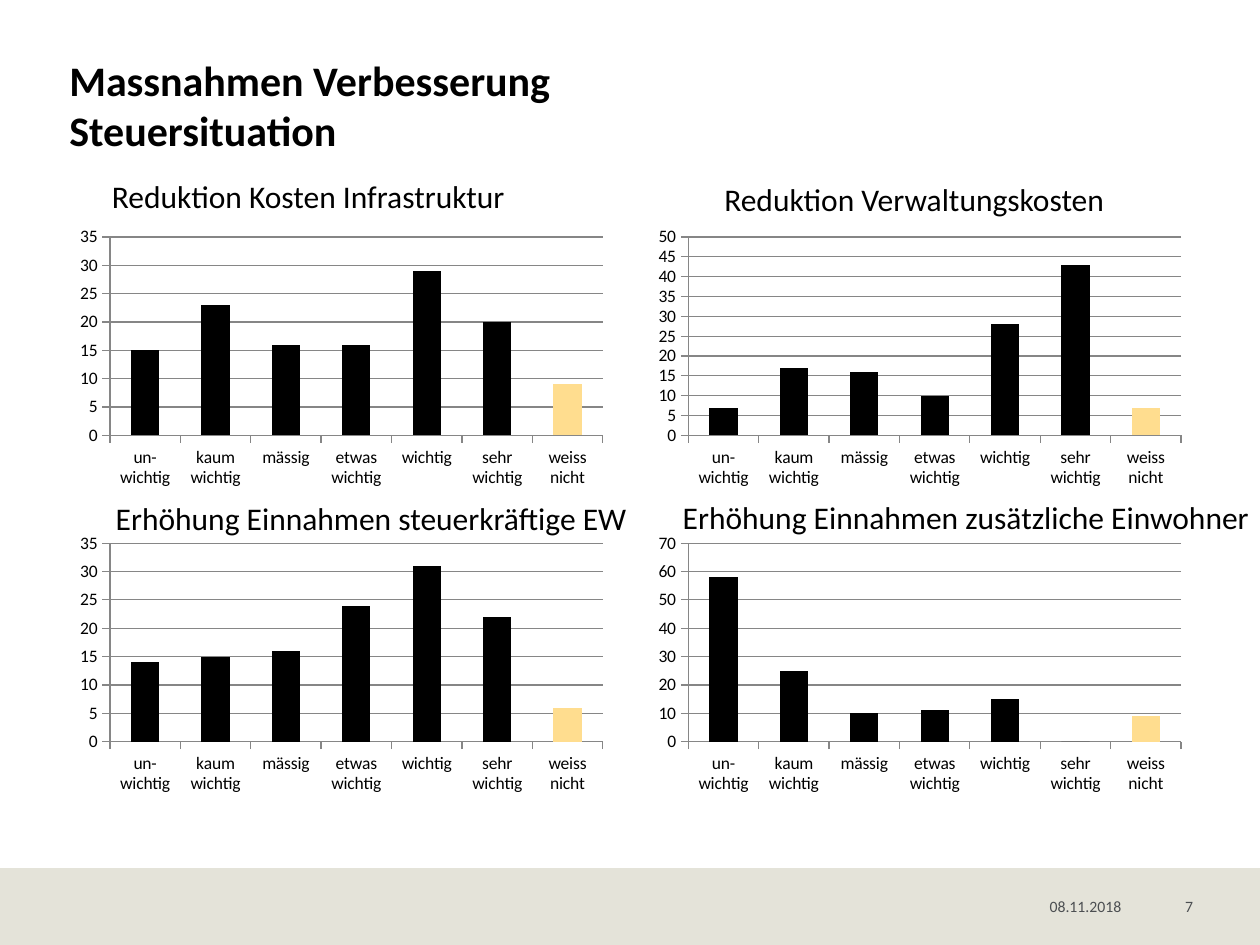
from pptx import Presentation
from pptx.chart.data import CategoryChartData
from pptx.dml.color import RGBColor
from pptx.enum.chart import XL_CHART_TYPE, XL_TICK_MARK
from pptx.enum.shapes import MSO_SHAPE
from pptx.enum.text import MSO_ANCHOR, PP_ALIGN
from pptx.util import Inches, Pt

BLACK = RGBColor(0x00, 0x00, 0x00)
AMBER = RGBColor(0xFF, 0xDD, 0x8F)
AXIS_GREY = RGBColor(0x86, 0x86, 0x86)
FOOTER_TEXT = RGBColor(0x4C, 0x4F, 0x52)
FOOTER_FILL = RGBColor(0xE4, 0xE3, 0xD9)
COLUMN = XL_CHART_TYPE.COLUMN_CLUSTERED
TICK_OUTSIDE = XL_TICK_MARK.OUTSIDE
TOP, BOTTOM = MSO_ANCHOR.TOP, MSO_ANCHOR.BOTTOM
LEFT, RIGHT = PP_ALIGN.LEFT, PP_ALIGN.RIGHT
FONT = "Calibri"

MARGIN = 0.55
CONTENT_WIDTH = 8.91
CHART_WIDTH, CHART_HEIGHT = 4.32, 2.15
COLUMN_STEP, ROW_STEP = 4.59, 2.43
CHARTS_TOP = 1.76
CATEGORIES = ["un-wichtig", "kaum wichtig", "mässig", "etwas wichtig",
              "wichtig", "sehr wichtig", "weiss nicht"]
PANELS = [
    ("Reduktion Kosten Infrastruktur", (0.79, 1.36, 3.35, 0.4),
     [15, 23, 16, 16, 29, 20, 9], 35, 5),
    ("Reduktion Verwaltungskosten", (5.65, 1.38, 3.25, 0.4),
     [7, 17, 16, 10, 28, 43, 7], 50, 5),
    ("Erhöhung Einnahmen steuerkräftige EW", (0.82, 3.91, 4.31, 0.4),
     [14, 15, 16, 24, 31, 22, 6], 35, 5),
    ("Erhöhung Einnahmen zusätzliche Einwohner", (5.32, 3.9, 4.75, 0.4),
     [58, 25, 10, 11, 15, 0, 9], 70, 10),
]


def add_text(page, area, text, size, color=BLACK, bold=False, align=LEFT,
             anchor=TOP, wrap=True, inset=(0, 0)):
    """Place one line of text in the given area."""
    box = page.shapes.add_textbox(*map(Inches, area))
    frame = box.text_frame
    frame.word_wrap = wrap
    frame.vertical_anchor = anchor
    frame.margin_left = frame.margin_right = Inches(inset[0])
    frame.margin_top = frame.margin_bottom = Inches(inset[1])
    para = frame.paragraphs[0]
    para.text = text
    para.alignment = align
    para.font.name = FONT
    para.font.size = Pt(size)
    para.font.bold = bold
    para.font.color.rgb = color


def add_heading(page, left, top, width):
    """Place the two heading lines."""
    add_text(page, (left, top, width, 0.4), "Massnahmen Verbesserung", 24, bold=True)
    add_text(page, (left, top + 0.4, width, 0.48), "Steuersituation", 24, bold=True)


def add_footer(page, left, top, width, height):
    """Place the footer band with date and page number."""
    band = page.shapes.add_shape(
        MSO_SHAPE.RECTANGLE, *map(Inches, (left, top, width, height)))
    band.shadow.inherit = False
    band.fill.solid()
    band.fill.fore_color.rgb = FOOTER_FILL
    band.line.fill.background()
    text_top = top + 0.04
    add_text(page, (left + 8.33, text_top, 0.71, 0.34), "08.11.2018", 9,
             FOOTER_TEXT, anchor=BOTTOM)
    add_text(page, (left + 9.04, text_top, 0.43, 0.34), "7", 9,
             FOOTER_TEXT, align=RIGHT, anchor=BOTTOM)


def add_column_chart(page, area, values, maximum, unit):
    """Place a column chart whose last column is highlighted."""
    data = CategoryChartData()
    data.categories = CATEGORIES
    data.add_series("Series 1", values)
    chart = page.shapes.add_chart(COLUMN, *map(Inches, area), data).chart
    chart.has_legend = False
    chart.has_title = False
    chart.font.name = FONT
    chart.font.size = Pt(10)
    chart.font.color.rgb = BLACK

    value_axis = chart.value_axis
    value_axis.minimum_scale = 0
    value_axis.maximum_scale = maximum
    value_axis.major_unit = unit
    value_axis.has_major_gridlines = True
    value_axis.major_gridlines.format.line.color.rgb = AXIS_GREY
    for axis in (value_axis, chart.category_axis):
        axis.major_tick_mark = TICK_OUTSIDE
        axis.format.line.color.rgb = AXIS_GREY

    plot = chart.plots[0]
    plot.gap_width = 150
    plot.vary_by_categories = False
    series = plot.series[0]
    last_column = series.points[len(values) - 1]
    for item, color in ((series, BLACK), (last_column, AMBER)):
        item.format.fill.solid()
        item.format.fill.fore_color.rgb = color


def add_chart_grid(page, left, top):
    """Place the four charts two by two, with their captions in front."""
    for index, (_, _, values, maximum, unit) in enumerate(PANELS):
        row, column = divmod(index, 2)
        area = (left + column * COLUMN_STEP, top + row * ROW_STEP,
                CHART_WIDTH, CHART_HEIGHT)
        add_column_chart(page, area, values, maximum, unit)
    for caption, area, *_ in PANELS:
        add_text(page, area, caption, 18, wrap=False, inset=(0.1, 0.05))


def main():
    """Build the deck and save it."""
    deck = Presentation()
    deck.slide_width, deck.slide_height = Inches(10), Inches(7.5)
    page = deck.slides.add_slide(deck.slide_layouts[6])
    add_footer(page, 0, 6.89, 10, 0.61)
    add_heading(page, MARGIN, 0.43, CONTENT_WIDTH)
    add_chart_grid(page, MARGIN, CHARTS_TOP)
    deck.save("out.pptx")


if __name__ == "__main__":
    main()
